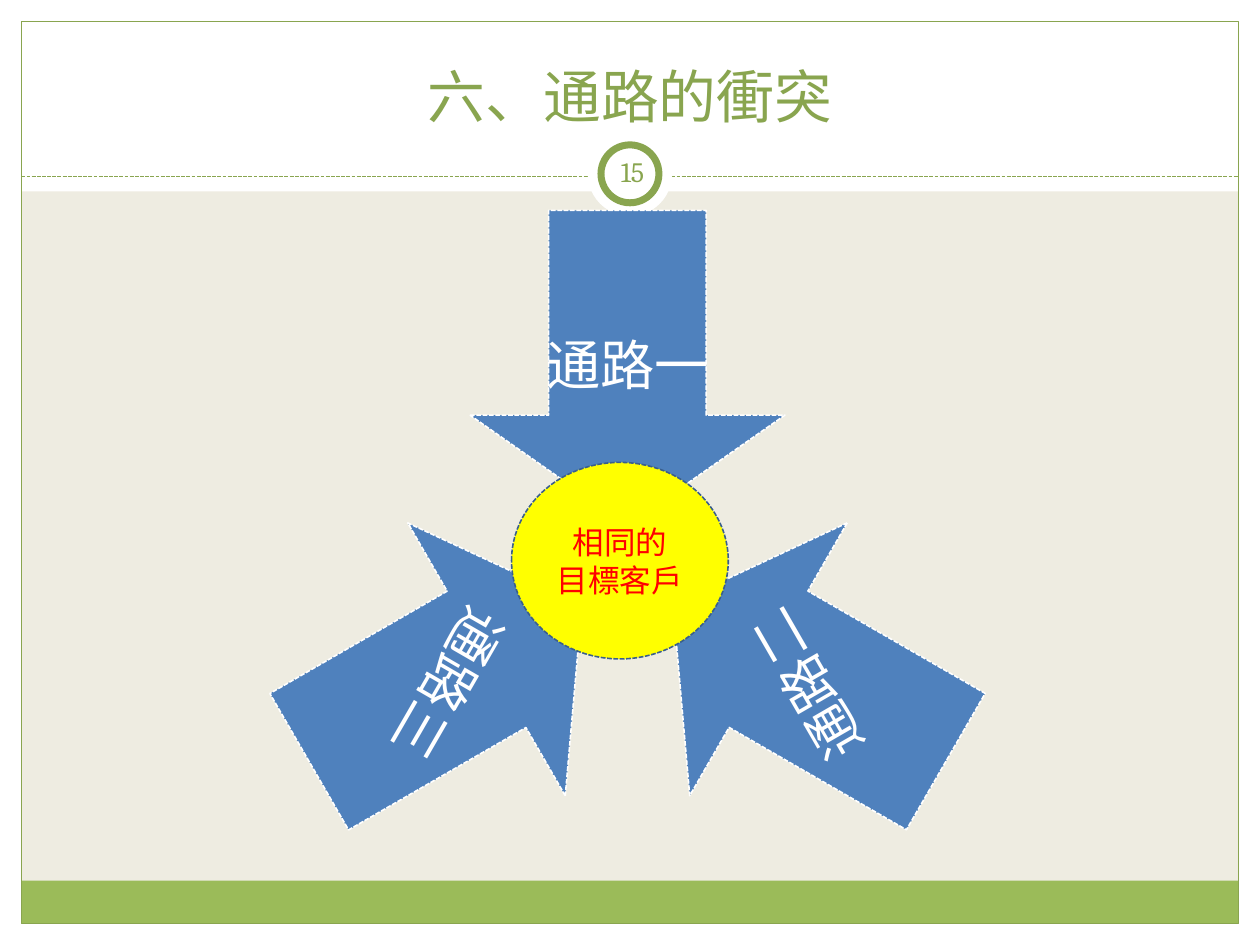
import dataclasses
import math

import pptx
import pptx.dml.color
import pptx.enum.dml
import pptx.enum.shapes
import pptx.enum.text
import pptx.oxml
import pptx.oxml.ns
import pptx.util

SCALE = 9144
SHAPES = pptx.enum.shapes.MSO_SHAPE
ANCHOR = pptx.enum.text.MSO_ANCHOR


@dataclasses.dataclass(frozen=True)
class Theme:
    font: str = "Cambria"
    background: str = "EEECE1"
    white: str = "FFFFFF"
    band: str = "9BBB59"
    accent: str = "89A54F"
    arrow: str = "4F81BD"
    target: str = "FFFF00"
    target_line: str = "3A5F8C"
    target_text: str = "FF0000"
    title_size: int = 33
    number_size: int = 16
    arrow_size: int = 31
    target_size: int = 18
    thin: float = 0.75
    edge: float = 0.9
    ring: int = 4


THEME = Theme()


def emu(*lengths):
    return [pptx.util.Emu(round(length * SCALE)) for length in lengths]


def color(value):
    return pptx.dml.color.RGBColor.from_string(value)


def style_line(line, value, width, dashed=False):
    line.color.rgb = color(value)
    line.width = pptx.util.Pt(width)
    if dashed:
        line.dash_style = pptx.enum.dml.MSO_LINE.SQUARE_DOT


def add_shape(slide, kind, box, fill=None, line=None, width=THEME.thin, dashed=False):
    shape = slide.shapes.add_shape(kind, *emu(*box))
    shape.shadow.inherit = False
    if fill:
        shape.fill.solid()
        shape.fill.fore_color.rgb = color(fill)
    else:
        shape.fill.background()
    if line:
        style_line(shape.line, line, width, dashed)
    else:
        shape.line.fill.background()
    return shape


def write_text(shape, text, size, value, anchor=ANCHOR.MIDDLE, inset=5, spacing=None):
    frame = shape.text_frame
    frame.word_wrap = True
    frame.vertical_anchor = anchor
    frame.margin_left, frame.margin_top, frame.margin_right, frame.margin_bottom = emu(*[inset] * 4)
    frame.text = text
    for paragraph in frame.paragraphs:
        paragraph.alignment = pptx.enum.text.PP_ALIGN.CENTER
        if spacing:
            paragraph.line_spacing = spacing
        for run in paragraph.runs:
            run.font.name = THEME.font
            run.font.size = pptx.util.Pt(size)
            run.font.color.rgb = color(value)


def draw_frame(slide, box):
    left, top, width, height = box
    margin, header = 17, 152
    for panel in (
        (left, top + height - margin, width, margin),
        (left, top, width, header),
        (left, top, margin, height),
        (left + width - margin, top, margin, height),
    ):
        add_shape(slide, SHAPES.RECTANGLE, panel, THEME.white)
    inner = width - 2 * margin
    add_shape(slide, SHAPES.RECTANGLE, (left + margin, top + height - 51, inner, 34), THEME.band)
    add_shape(slide, SHAPES.RECTANGLE,
              (left + margin, top + margin, inner, height - 2 * margin), line=THEME.accent)


def draw_header(slide, box, title, number):
    left, top, width, height = box
    rule = top + 140
    connector = slide.shapes.add_connector(
        pptx.enum.shapes.MSO_CONNECTOR.STRAIGHT, *emu(left + 17, rule, left + width - 17, rule))
    style_line(connector.line, THEME.accent, THEME.thin, True)
    connector.element.spPr.append(pptx.oxml.parse_xml(
        "<a:effectLst %s/>" % pptx.oxml.ns.nsdecls("a")))

    center_x, center_y = left + width / 2, top + 138
    for diameter, line in ((67, None), (46, THEME.accent)):
        add_shape(slide, SHAPES.OVAL,
                  (center_x - diameter / 2, center_y - diameter / 2, diameter, diameter),
                  THEME.white, line, THEME.ring)

    title_box = slide.shapes.add_textbox(*emu(left + 33, top + 25, width - 66, 83))
    write_text(title_box, title, THEME.title_size, THEME.accent, ANCHOR.BOTTOM)
    number_box = slide.shapes.add_textbox(*emu(left + 477, top + 112, 50, 48))
    write_text(number_box, number, THEME.number_size, THEME.accent)


def draw_channels(slide, box, channels, target):
    left, top, width, height = box
    side = height / 2
    radius = height / 3
    center_x, center_y = left + width / 2, top + side / 2 + radius
    for index, channel in enumerate(channels):
        turn = index * 360 / len(channels)
        angle = math.radians(turn)
        place = (center_x + radius * math.sin(angle) - side / 2,
                 center_y - radius * math.cos(angle) - side / 2, side, side)
        arrow = add_shape(slide, SHAPES.DOWN_ARROW, place, THEME.arrow,
                          THEME.white, THEME.edge, True)
        arrow.adjustments[0], arrow.adjustments[1] = 0.5, 0.35
        arrow.rotation = turn
        label = slide.shapes.add_textbox(*emu(*place))
        label.rotation = -turn % 360
        write_text(label, channel, THEME.arrow_size, THEME.white, inset=24, spacing=0.9)

    customers = add_shape(slide, SHAPES.OVAL, (left + 177, top + 200, 172, 156), THEME.target,
                          THEME.target_line, THEME.edge, True)
    write_text(customers, target, THEME.target_size, THEME.target_text)


def main():
    presentation = pptx.Presentation()
    presentation.slide_width, presentation.slide_height = emu(1000, 750)
    slide = presentation.slides.add_slide(presentation.slide_layouts[6])
    slide.background.fill.solid()
    slide.background.fill.fore_color.rgb = color(THEME.background)
    draw_frame(slide, (0, 0, 1000, 750))
    draw_header(slide, (0, 0, 1000, 172), "六、通路的衝突", "15")
    draw_channels(slide, (229, 167, 538, 500),
                  ("通路一", "通路二", "通路三"), "相同的\n目標客戶")
    presentation.save("out.pptx")


if __name__ == "__main__":
    main()
